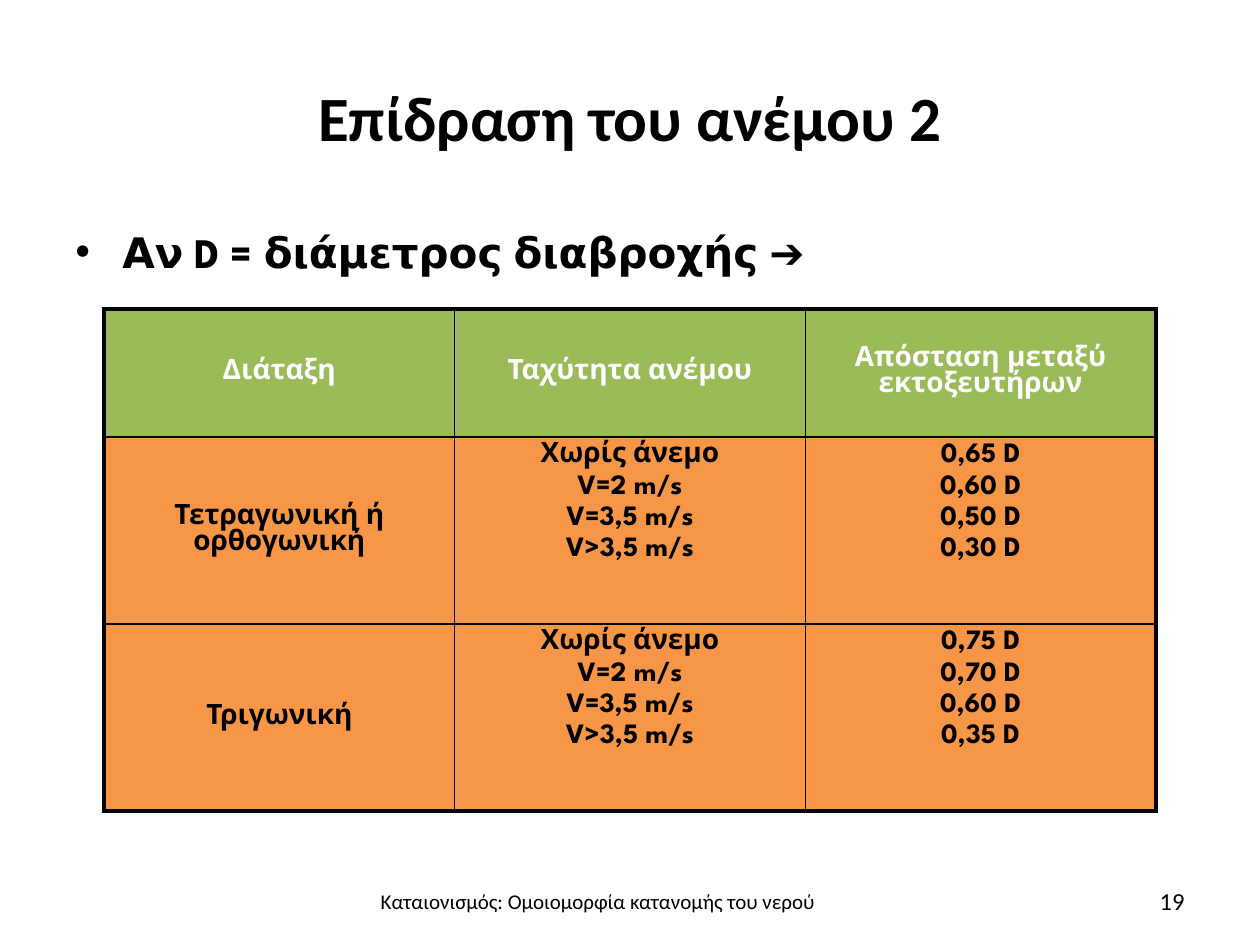
import pptx
import pptx.dml.color
import pptx.enum.text
import pptx.oxml
import pptx.oxml.ns
import pptx.util
from lxml import etree

PX = 914400 / 126
ALIGN = pptx.enum.text.PP_ALIGN
ANCHOR = pptx.enum.text.MSO_ANCHOR
BLACK, WHITE, GREEN, ORANGE = "000000", "FFFFFF", "9BBB59", "F79646"


def style(paragraph, size, font, color=BLACK, bold=False, align=ALIGN.CENTER):
    paragraph.alignment = align
    paragraph.font.size = pptx.util.Pt(size)
    paragraph.font.name = font
    paragraph.font.bold = bold
    paragraph.font.color.rgb = pptx.dml.color.RGBColor.from_string(color)


def add_text(left, top, width, height, text, anchor=ANCHOR.MIDDLE):
    """Add a wrapping text box placed in px and return its paragraph."""
    box = slide.shapes.add_textbox(*(round(v * PX) for v in (left, top, width, height)))
    box.text_frame.word_wrap = True
    box.text_frame.vertical_anchor = anchor
    box.text_frame.text = text
    return box.text_frame.paragraphs[0]


prs = pptx.Presentation()
prs.slide_width = round(1260 * PX)
prs.slide_height = round(945 * PX)
slide = prs.slides.add_slide(prs.slide_layouts[6])

footer = add_text(346, 876, 504, 50, "Καταιονισμός: Ομοιομορφία κατανομής του νερού")
style(footer, 12, "Calibri")

title = add_text(63, 38, 1134, 157, "Επίδραση του ανέμου 2")
style(title, 36, "Calibri", bold=True)

definition = add_text(63, 220, 1134, 624, "Αν D = διάμετρος διαβροχής ➔", ANCHOR.TOP)
bullet_props = definition._p.get_or_add_pPr()
bullet_props.set("marL", str(round(47 * PX)))
bullet_props.set("indent", str(round(-47 * PX)))
etree.SubElement(bullet_props, pptx.oxml.ns.qn("a:buFont")).set("typeface", "Arial")
etree.SubElement(bullet_props, pptx.oxml.ns.qn("a:buChar")).set("char", "•")
style(definition, 24, "League Spartan", bold=True, align=ALIGN.LEFT)

winds = "Χωρίς άνεμο\nV=2 m/s\nV=3,5 m/s\nV>3,5 m/s"
spacings = [
    ["Διάταξη", "Ταχύτητα ανέμου", "Απόσταση μεταξύ εκτοξευτήρων"],
    ["Τετραγωνική ή ορθογωνική", winds, "0,65 D\n0,60 D\n0,50 D\n0,30 D"],
    ["Τριγωνική", winds, "0,75 D\n0,70 D\n0,60 D\n0,35 D"],
]
table = slide.shapes.add_table(
    3, 3, *(round(v * PX) for v in (104, 309, 1052, 501))).table
for column in table.columns:
    column.width = round(1052 / 3 * PX)
for row, height in zip(table.rows, (128, 187, 187)):
    row.height = round(height * PX)

for r, texts in enumerate(spacings):
    for c, text in enumerate(texts):
        cell = table.cell(r, c)
        is_label = r == 0 or c == 0
        cell.vertical_anchor = ANCHOR.MIDDLE if is_label else ANCHOR.TOP
        cell.text = text
        for i, paragraph in enumerate(cell.text_frame.paragraphs):
            style(paragraph, 16, "League Spartan", WHITE if r == 0 else BLACK, bold=True)
            if i:
                paragraph.space_before = pptx.util.Pt(3.2)
        outer_edges = {"L": c == 0, "R": c == 2, "T": r == 0, "B": r == 2}
        for side, is_outer in outer_edges.items():
            width = pptx.util.Pt(2.25 if is_outer else 1)
            cell._tc.get_or_add_tcPr().append(pptx.oxml.parse_xml(
                f'<a:ln{side} {pptx.oxml.ns.nsdecls("a")} w="{width}">'
                f'<a:solidFill><a:srgbClr val="{BLACK}"/></a:solidFill></a:ln{side}>'))
        cell.fill.solid()
        cell.fill.fore_color.rgb = pptx.dml.color.RGBColor.from_string(
            GREEN if r == 0 else ORANGE)

page_number = add_text(903, 876, 294, 50, "19")
style(page_number, 14, "Calibri", align=ALIGN.RIGHT)

prs.save("out.pptx")
